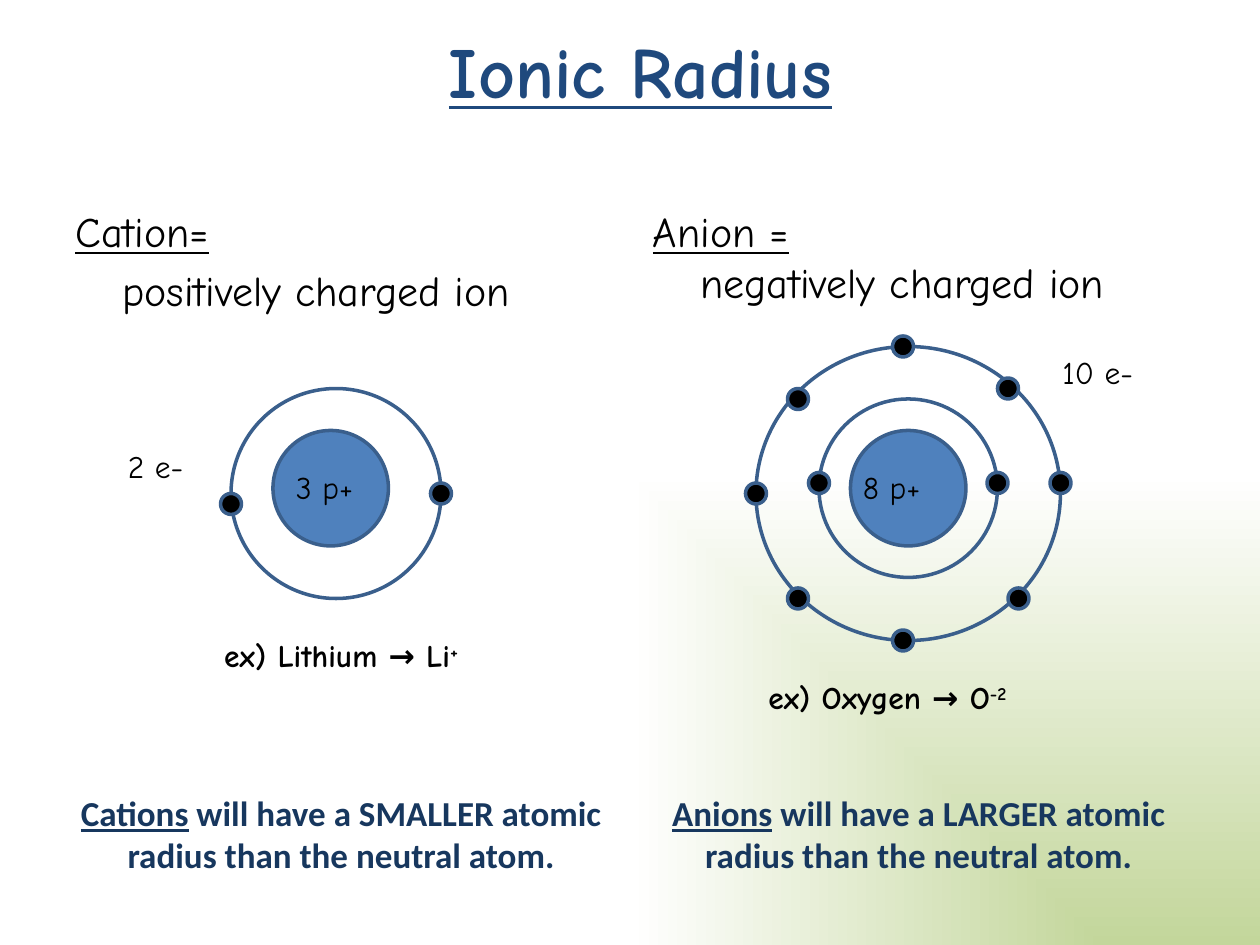
"""Builds the Ionic Radius slide comparing a cation with an anion."""
from dataclasses import dataclass

from lxml import etree
from pptx import Presentation
from pptx.dml.color import RGBColor
from pptx.enum import shapes, text
from pptx.oxml import ns
from pptx.util import Pt


@dataclass(frozen=True)
class Theme:
    """Colours, fonts and type sizes of the slide."""
    ink: str = "000000"
    title: str = "1F497D"
    statement: str = "17375E"
    nucleus: str = "4F81BD"
    outline: str = "3A5F8C"
    glow: str = "C3D69B"
    paper: str = "FFFFFF"
    hand: str = "Comic Neue"
    sans: str = "Calibri"
    title_size: int = 41
    heading_size: int = 24
    statement_size: int = 20
    label_size: int = 18


THEME = Theme()
CENTER, LEFT = text.PP_ALIGN.CENTER, text.PP_ALIGN.LEFT
COLUMN_WIDTH = 318
ELECTRON = 12


def style(run, size, color=THEME.ink, face=THEME.hand, bold=False, underline=False):
    """Format one run."""
    font = run.font
    font.size, font.name, font.bold, font.underline = Pt(size), face, bold, underline
    font.color.rgb = RGBColor.from_string(color)


def add_text(parent, box, align=LEFT, anchor=text.MSO_ANCHOR.TOP):
    """Add a wrapping text box and return its frame."""
    frame = parent.add_textbox(*map(Pt, box)).text_frame
    frame.word_wrap = True
    frame.vertical_anchor = anchor
    frame.paragraphs[0].alignment = align
    return frame


def add_circle(group, box, fill=None):
    """Add an outlined ellipse, hollow unless a fill is given."""
    circle = group.shapes.add_shape(shapes.MSO_SHAPE.OVAL, *map(Pt, box))
    circle.shadow.inherit = False
    circle.line.color.rgb = RGBColor.from_string(THEME.outline)
    circle.line.width = Pt(2)
    if fill:
        circle.fill.solid()
        circle.fill.fore_color.rgb = RGBColor.from_string(fill)
    else:
        circle.fill.background()


def add_label(parent, wording, box, align):
    """Add a plain particle count."""
    frame = add_text(parent, box, align)
    frame.text = wording
    style(frame.paragraphs[0].runs[0], THEME.label_size)


def add_atom(slide, nucleus, protons, protons_left, orbits, electrons, count, count_at, count_align):
    """Add a grouped atom with nucleus, orbits, electrons and counts."""
    atom = slide.shapes.add_group_shape()
    add_circle(atom, (*nucleus, 66, 66), THEME.nucleus)
    add_label(atom.shapes, protons, (protons_left, 264, 60, 29), CENTER)
    for orbit in orbits:
        add_circle(atom, orbit)
    for left, top in electrons:
        add_circle(atom, (left, top, ELECTRON, ELECTRON), THEME.ink)
    add_label(atom.shapes, count, (*count_at, 60, 29), count_align)


def add_definition(slide, left, term, meaning, gap):
    """Add an underlined term above its indented meaning."""
    frame = add_text(slide.shapes, (left, 114, COLUMN_WIDTH, 310))
    frame.text = f"{term}\n\t{meaning}"
    for paragraph, underlined in zip(frame.paragraphs, (True, False)):
        paragraph.space_before = Pt(gap)
        properties = paragraph._p.get_or_add_pPr()
        properties.set("marL", str(Pt(27)))
        properties.set("indent", str(Pt(-27)))
        style(paragraph.runs[0], THEME.heading_size, underline=underlined)


def add_example(slide, box, wording, charge, align):
    """Add an example with a superscript charge."""
    paragraph = add_text(slide.shapes, box, align).paragraphs[0]
    for part in (wording, charge):
        run = paragraph.add_run()
        run.text = part
        style(run, THEME.label_size, bold=True)
    run.font._element.set("baseline", "30000")


def add_statement(slide, left, ion, size_word):
    """Add the conclusion at the foot of a column."""
    frame = add_text(slide.shapes, (left, 426, COLUMN_WIDTH, 78), CENTER, text.MSO_ANCHOR.BOTTOM)
    paragraph = frame.paragraphs[0]
    paragraph.space_before = Pt(4)
    rest = f" will have a {size_word} atomic radius than the neutral atom."
    for part, underlined in ((ion, True), (rest, False)):
        run = paragraph.add_run()
        run.text = part
        style(run, THEME.statement_size, THEME.statement, THEME.sans, True, underlined)


def set_title(slide, wording):
    """Place and format the title."""
    title = slide.shapes.title
    title.left, title.top, title.width, title.height = map(Pt, (30, 12, 672, 56))
    title.text_frame.text = wording
    title.text_frame.paragraphs[0].alignment = CENTER
    style(title.text_frame.paragraphs[0].runs[0], THEME.title_size, THEME.title,
          bold=True, underline=True)


def set_background(slide):
    """Fill the background with a glow from the bottom right corner."""
    fill = slide.background.fill
    fill.gradient()
    for stop, color, position in zip(fill.gradient_stops, (THEME.glow, THEME.paper), (0, 1)):
        stop.color.rgb = RGBColor.from_string(color)
        stop.position = position
    gradient = slide._element.find(".//" + ns.qn("a:gradFill"))
    gradient.remove(gradient.find(ns.qn("a:lin")))
    spread = etree.SubElement(gradient, ns.qn("a:path"), {"path": "rect"})
    etree.SubElement(spread, ns.qn("a:fillToRect"), {"l": "100000", "t": "100000"})


def main():
    """Build and save the slide."""
    deck = Presentation()
    deck.slide_width, deck.slide_height = Pt(720), Pt(540)
    slide = deck.slides.add_slide(deck.slide_layouts[5])
    set_background(slide)
    set_title(slide, "Ionic Radius")

    cation_left, anion_left = 36, 366
    add_statement(slide, cation_left, "Cations", "SMALLER")
    add_statement(slide, anion_left, "Anions", "LARGER")
    add_definition(slide, cation_left, "Cation=", "positively charged ion", 4.8)
    add_definition(slide, anion_left, "Anion =", "negatively charged ion", 0)

    add_atom(slide, (156, 246), "3 p+", 162, [(132, 222, 120, 120)],
             [(126, 282), (246, 276)], "2 e-", (66, 252), CENTER)
    add_example(slide, (102, 360, 186, 44), "ex) Lithium → Li", "+", CENTER)

    inner_electrons = [(462, 270), (564, 270)]
    outer_electrons = [(600, 270), (426, 276), (510, 360), (510, 192),
                       (450, 222), (576, 336), (450, 336), (570, 216)]
    add_atom(slide, (486, 246), "8 p+", 486, [(468, 228, 102, 102), (432, 198, 174, 168)],
             inner_electrons + outer_electrons, "10 e-", (600, 198), LEFT)
    add_example(slide, (432, 384, 180, 30), "ex) Oxygen → O", "-2", LEFT)

    deck.save("out.pptx")


if __name__ == "__main__":
    main()
